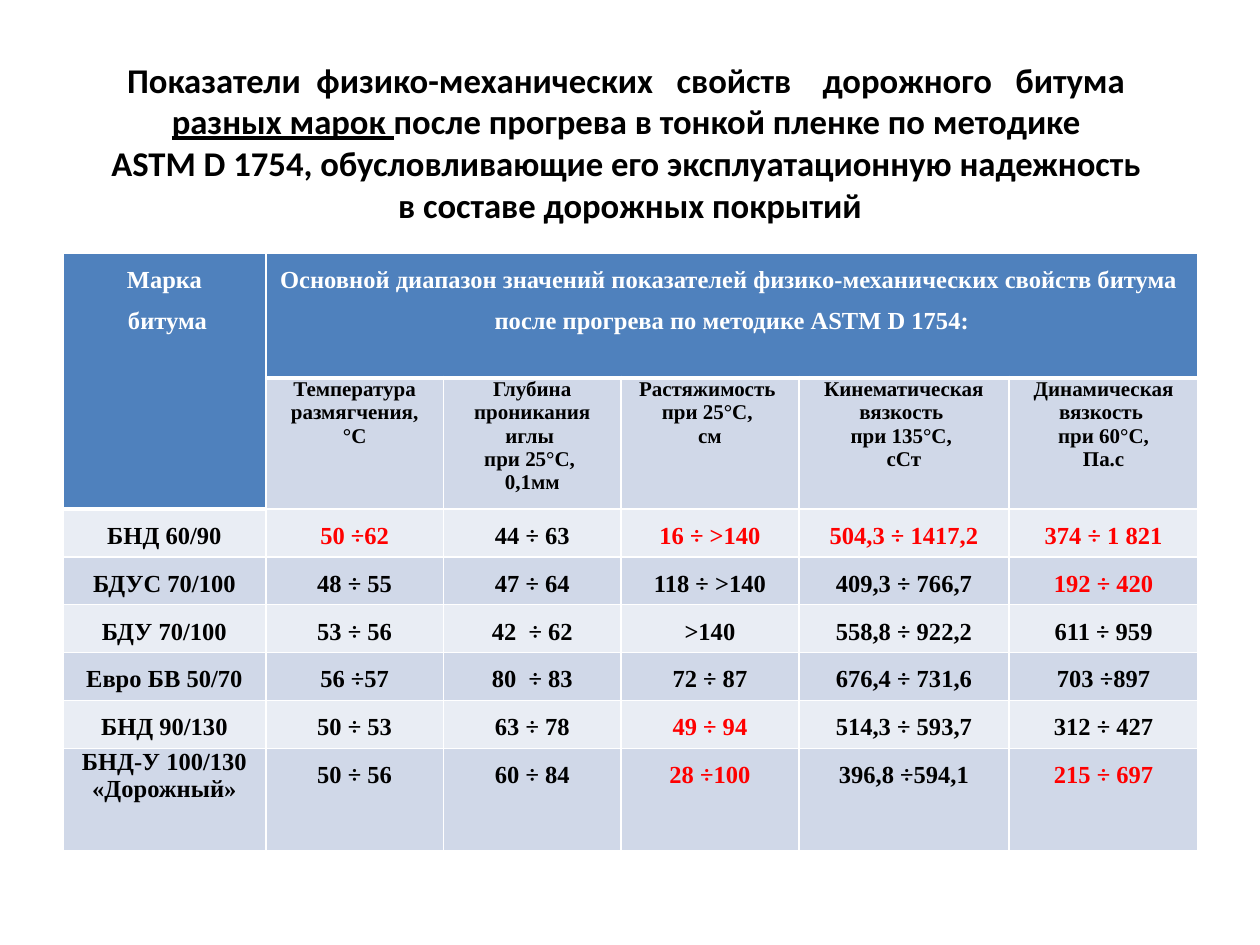
from lxml.etree import SubElement
from pptx import Presentation
from pptx.dml.color import RGBColor as RGB
from pptx.enum.text import MSO_ANCHOR as Anchor, MSO_AUTO_SIZE as AutoSize, PP_ALIGN as Align
from pptx.oxml.ns import qn
from pptx.util import Inches, Pt

COLORS = {
    "text": "000000",
    "head_text": "FFFFFF",
    "accent": "FF0000",
    "head": "4F81BD",
    "band": "D0D8E8",
    "light": "E9EDF4",
    "border": "FFFFFF",
}
WIDTH, HEIGHT = Inches(10), Inches(7.5)
COLS = [1.61, 1.41, 1.41, 1.41, 1.67, 1.5]
ROWS = [0.99, 1.04] + [0.38] * 5 + [0.81]

TITLE = [
    [("Показатели  физико-механических   свойств    дорожного   битума ", False)],
    [("разных марок ", True), ("после прогрева в тонкой пленке по методике ", False)],
    [("ASTM D 1754, обусловливающие его эксплуатационную надежность ", False)],
    [("в составе дорожных покрытий", False)],
]
GRADE_HEAD = "Марка\n битума"
RANGE_HEAD = (
    "Основной диапазон значений показателей физико-механических свойств битума \n"
    "после прогрева по методике ASTM D 1754:"
)
SUBHEADS = [
    "Температура размягчения,\n°С",
    "Глубина проникания иглы \nпри 25°С, \n0,1мм",
    "Растяжимость \nпри 25°С, \nсм",
    "Кинематическая вязкость \nпри 135°С, \nсСт",
    "Динамическая вязкость \nпри 60°С,\nПа.с",
]
GRADES = [
    ["БНД 60/90", "50 ÷62", "44 ÷ 63", "16 ÷ >140", "504,3 ÷ 1417,2", "374 ÷ 1 821"],
    ["БДУС 70/100", "48 ÷ 55", "47 ÷ 64", "118 ÷ >140", "409,3 ÷ 766,7", "192 ÷ 420"],
    ["БДУ 70/100", "53 ÷ 56", "42  ÷ 62", ">140", "558,8 ÷ 922,2", "611 ÷ 959"],
    ["Евро БВ 50/70", "56 ÷57", "80  ÷ 83", "72 ÷ 87", "676,4 ÷ 731,6", "703 ÷897"],
    ["БНД 90/130", "50 ÷ 53", "63 ÷ 78", "49 ÷ 94", "514,3 ÷ 593,7", "312 ÷ 427"],
    ["БНД-У 100/130 «Дорожный»", "50 ÷ 56", "60 ÷ 84", "28 ÷100", "396,8 ÷594,1", "215 ÷ 697"],
]
ACCENTED = {(0, 1), (0, 3), (0, 4), (0, 5), (1, 5), (4, 3), (5, 3), (5, 5)}


def color(name):
    return RGB.from_string(COLORS[name])


def box(left, top, width, height):
    return [round(v) for v in (left * WIDTH, top * HEIGHT, width * WIDTH, height * HEIGHT)]


def format_run(r, font, size, fill):
    r.font.name, r.font.size, r.font.bold = font, Pt(size), True
    r.font.color.rgb = color(fill)


def add_title(s):
    sp = s.shapes.title
    sp.left, sp.top, sp.width, sp.height = box(0.05, 0.04, 0.9, 0.22)
    tf = sp.text_frame
    tf.word_wrap, tf.auto_size = True, AutoSize.NONE
    tf.vertical_anchor = Anchor.MIDDLE
    p = tf.paragraphs[0]
    p.alignment = Align.CENTER
    for i, line in enumerate(TITLE):
        if i:
            p.add_line_break()
        for text, underlined in line:
            r = p.add_run()
            r.text = text
            format_run(r, "Calibri", 19.8, "text")
            r.font.underline = underlined


def set_borders(cell, bottom):
    tc_pr = cell._tc.get_or_add_tcPr()
    for side, width in (("L", 1), ("R", 1), ("T", 1), ("B", bottom)):
        ln = SubElement(tc_pr, qn(f"a:ln{side}"), w=str(Pt(width)))
        fill = SubElement(ln, qn("a:solidFill"))
        SubElement(fill, qn("a:srgbClr"), val=COLORS["border"])


def fill_cell(cell, text, fill, size=14, ink="text", spacing=1.5, bottom=1):
    set_borders(cell, bottom)
    cell.fill.solid()
    cell.fill.fore_color.rgb = color(fill)
    cell.margin_left = cell.margin_right = Inches(0.07)
    cell.margin_top = cell.margin_bottom = 0
    cell.text_frame.text = text
    for p in cell.text_frame.paragraphs:
        p.alignment, p.line_spacing = Align.CENTER, spacing
        for r in p.runs:
            format_run(r, "Times New Roman", size, ink)


def fill_heads(table):
    table.cell(0, 0).merge(table.cell(1, 0))
    table.cell(0, 1).merge(table.cell(0, len(COLS) - 1))
    heads = {(0, 0): GRADE_HEAD, (0, 1): RANGE_HEAD}
    spanned = [(1, 0)] + [(0, col) for col in range(2, len(COLS))]
    for row, col in [*heads, *spanned]:
        text = heads.get((row, col), "")
        fill_cell(table.cell(row, col), text, "head", ink="head_text", bottom=3)
    for col, text in enumerate(SUBHEADS, 1):
        fill_cell(table.cell(1, col), text, "band", size=12, spacing=1.0)


def fill_grades(table):
    for row, values in enumerate(GRADES):
        fill = "band" if row % 2 else "light"
        for col, text in enumerate(values):
            ink = "accent" if (row, col) in ACCENTED else "text"
            two_lines = (row, col) == (len(GRADES) - 1, 0)
            fill_cell(table.cell(row + 2, col), text, fill, ink=ink,
                      spacing=1.0 if two_lines else 1.5)


def add_grade_table(s):
    frame = s.shapes.add_table(len(ROWS), len(COLS), *box(0.05, 0.268, 0.9, 0.63))
    table = frame.table
    for column, width in zip(table.columns, COLS):
        column.width = Inches(width)
    for row, height in zip(table.rows, ROWS):
        row.height = Inches(height)
    fill_heads(table)
    fill_grades(table)


def main():
    prs = Presentation()
    prs.slide_width, prs.slide_height = WIDTH, HEIGHT
    s = prs.slides.add_slide(prs.slide_layouts[5])
    add_title(s)
    add_grade_table(s)
    prs.save("out.pptx")


if __name__ == "__main__":
    main()
